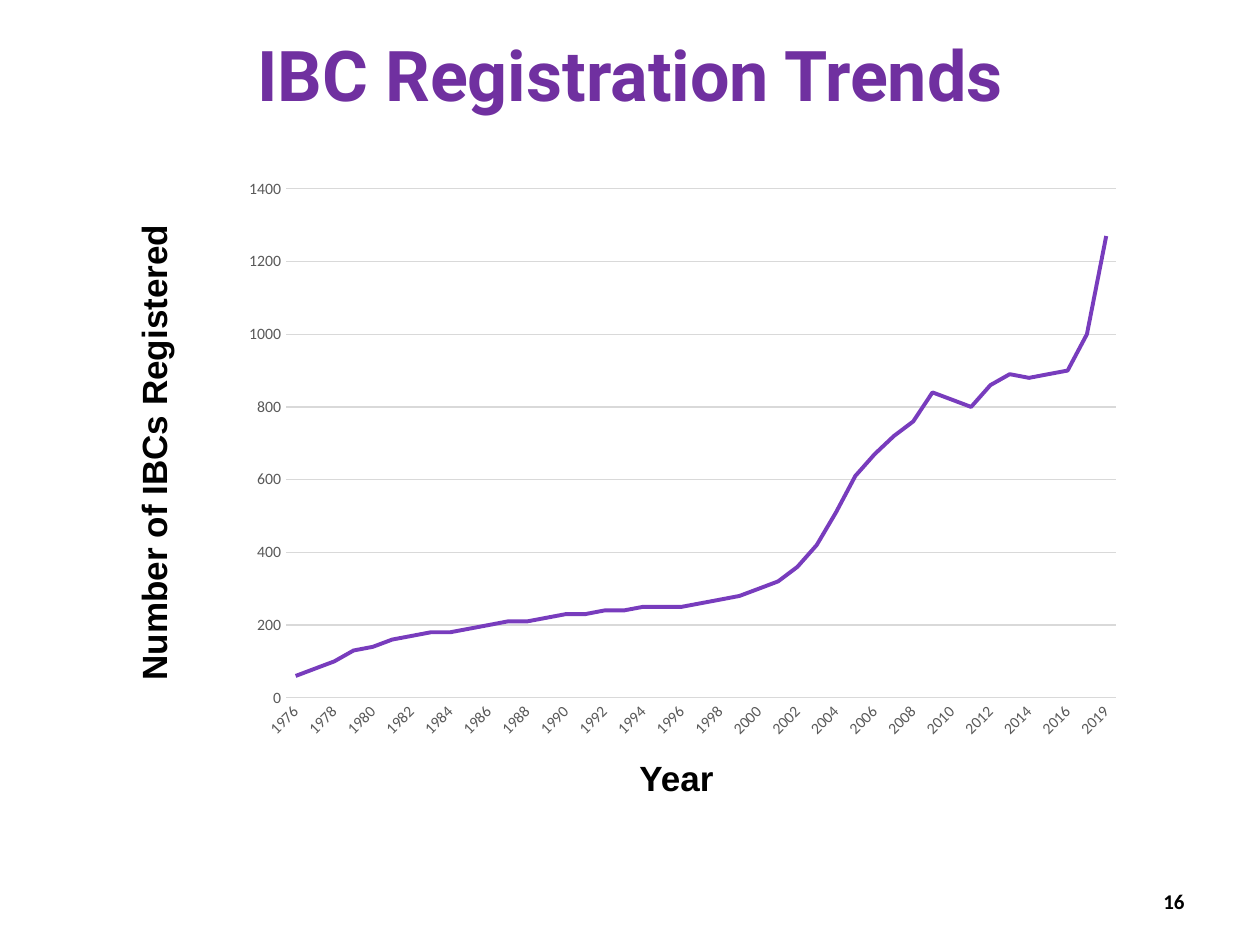
"""Build the IBC registration trends slide with its line chart."""
import pptx
import pptx.chart.data
import pptx.dml.color
import pptx.enum.chart
import pptx.enum.text
import pptx.util

PX = 914400 / 126
ALIGN = pptx.enum.text.PP_ALIGN
MIDDLE = pptx.enum.text.MSO_ANCHOR.MIDDLE
TICK_NONE = pptx.enum.chart.XL_TICK_MARK.NONE


def color(value):
    return pptx.dml.color.RGBColor.from_string(value)


def place_text(shape, box, text, font_name, size, fill, align):
    shape.left, shape.top, shape.width, shape.height = [round(n * PX) for n in box]
    shape.text_frame.word_wrap = True
    paragraph = shape.text_frame.paragraphs[0]
    paragraph.text = text
    paragraph.alignment = align
    paragraph.font.name = font_name
    paragraph.font.size = pptx.util.Pt(size)
    paragraph.font.bold = True
    paragraph.font.color.rgb = color(fill)


presentation = pptx.Presentation()
presentation.slide_width = pptx.util.Inches(10)
presentation.slide_height = pptx.util.Inches(7.5)
slide = presentation.slides.add_slide(presentation.slide_layouts[5])

title = slide.shapes.title
place_text(title, (0, 21, 1260, 105), "IBC Registration Trends", "Roboto", 40, "7030A0", ALIGN.CENTER)
title.text_frame.vertical_anchor = MIDDLE

page_number = slide.shapes.add_textbox(0, 0, 0, 0)
place_text(page_number, (903, 876, 294, 50), "16", "Calibri", 12, "000000", ALIGN.RIGHT)
page_number.text_frame.vertical_anchor = MIDDLE

value_label = slide.shapes.add_textbox(0, 0, 0, 0)
place_text(value_label, (126, 210, 68, 483), "Number of IBCs Registered", "Arial", 20, "000000", ALIGN.CENTER)
value_label.rotation = 180
value_label.text_frame._txBody.bodyPr.set("vert", "eaVert")

year_label = slide.shapes.add_textbox(0, 0, 0, 0)
place_text(year_label, (262, 750, 829, 54), "Year", "Arial", 20, "000000", ALIGN.CENTER)

chart_data = pptx.chart.data.CategoryChartData()
chart_data.categories = [str(year) for year in [*range(1976, 2018), 2019]]
chart_data.add_series("Series 1", [
    60, 80, 100, 130, 140, 160, 170, 180, 180, 190, 200,
    210, 210, 220, 230, 230, 240, 240, 250, 250, 250, 260,
    270, 280, 300, 320, 360, 420, 510, 610, 670, 720, 760,
    840, 820, 800, 860, 890, 880, 890, 900, 1000, 1270,
])
chart_box = [round(n * PX) for n in (231, 168, 903, 582)]
chart = slide.shapes.add_chart(pptx.enum.chart.XL_CHART_TYPE.LINE, *chart_box, chart_data).chart
chart.has_title = False
chart.has_legend = False
chart.font.name = "Calibri"
chart.font.size = pptx.util.Pt(10)
chart.font.color.rgb = color("000000")
chart.plots[0].vary_by_categories = False

series = chart.plots[0].series[0]
series.smooth = False
series.marker.style = pptx.enum.chart.XL_MARKER_STYLE.NONE
series.format.line.color.rgb = color("783CBD")
series.format.line.width = pptx.util.Pt(2.25)

for axis in (chart.category_axis, chart.value_axis):
    axis.major_tick_mark = TICK_NONE
    axis.minor_tick_mark = TICK_NONE
    axis.tick_labels.font.name = "Calibri"
    axis.tick_labels.font.size = pptx.util.Pt(9)
    axis.tick_labels.font.color.rgb = color("595959")

value_axis = chart.value_axis
value_axis.minimum_scale = 0
value_axis.maximum_scale = 1400
value_axis.major_unit = 200
value_axis.format.line.fill.background()
for line in (chart.category_axis.format.line, value_axis.major_gridlines.format.line):
    line.color.rgb = color("D9D9D9")
    line.width = pptx.util.Pt(0.75)

label_body = chart.category_axis._element.txPr.bodyPr
label_body.set("rot", "-2700000")
label_body.set("vert", "horz")

presentation.save("out.pptx")
